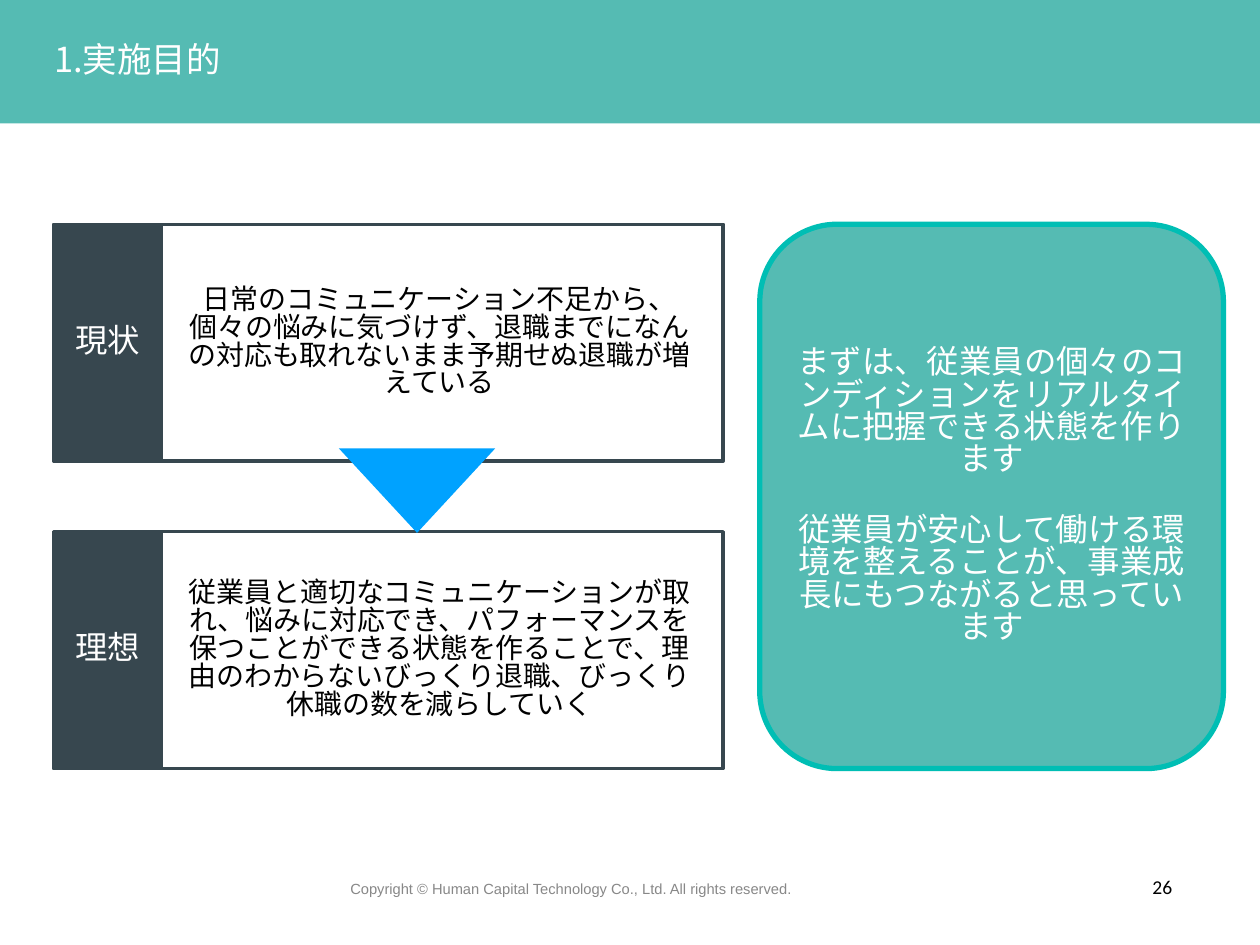
import pptx
import pptx.util
import pptx.dml.color
import pptx.enum.shapes
import pptx.enum.text
import pptx.oxml.ns
from lxml import etree

Inches, Pt = pptx.util.Inches, pptx.util.Pt
KIND = pptx.enum.shapes.MSO_SHAPE
ALIGN = pptx.enum.text.PP_ALIGN
ANCHOR = pptx.enum.text.MSO_ANCHOR

COLORS = {"teal": "55BBB3", "edge": "00BEB4", "slate": "37474F",
          "arrow": "00A2FF", "white": "FFFFFF", "black": "000000",
          "gray": "888888"}
FONT = "Noto Sans CJK JP"
TIGHT = 0.83

TITLE = "1.実施目的"
STAGES = [
    ("現状", "日常のコミュニケーション不足から、個々の悩みに気づけず、"
     "退職までになんの対応も取れないまま予期せぬ退職が増えている"),
    ("理想", "従業員と適切なコミュニケーションが取れ、悩みに対応でき、"
     "パフォーマンスを保つことができる状態を作ることで、"
     "理由のわからないびっくり退職、びっくり休職の数を減らしていく"),
]
GOALS = [
    "まずは、従業員の個々のコンディションをリアルタイムに把握できる状態を作ります",
    "従業員が安心して働ける環境を整えることが、事業成長にもつながると思っています",
]
FOOTER = "Copyright © Human Capital Technology Co., Ltd. All rights reserved."
PAGE = "26"

LEFT, TOP, WIDE, HIGH, STEP = 0.43, 1.78, 5.31, 1.88, 2.44
LABEL = 0.85

deck = pptx.Presentation()
deck.slide_width, deck.slide_height = Inches(10), Inches(7.5)
slide = deck.slides.add_slide(deck.slide_layouts[6])


def rgb(name):
    return pptx.dml.color.RGBColor.from_string(COLORS[name])


def shape(kind, box, fill=None, line=None, width=2):
    item = slide.shapes.add_shape(kind, *map(Inches, box))
    item.shadow.inherit = False
    if fill:
        item.fill.solid()
        item.fill.fore_color.rgb = rgb(fill)
    else:
        item.fill.background()
    if line:
        item.line.color.rgb = rgb(line)
        item.line.width = Pt(width)
    else:
        item.line.fill.background()
    return item


def write(item, texts, size, color, font=FONT, align=ALIGN.CENTER,
          pad=0.04, wrap=True, anchor=ANCHOR.MIDDLE, gap=0):
    frame = item.text_frame
    frame.word_wrap = wrap
    frame.vertical_anchor = anchor
    frame.margin_left = frame.margin_right = Inches(pad)
    frame.margin_top = frame.margin_bottom = Inches(pad)
    for i, text in enumerate(texts):
        para = frame.add_paragraph() if i else frame.paragraphs[0]
        para.alignment = align
        if font == FONT:
            para.line_spacing = TIGHT
        if i:
            para.space_before = Pt(gap)
        run = para.add_run()
        run.text = text
        run.font.name = font
        run.font.size = Pt(size)
        run.font.color.rgb = rgb(color)
        # East Asian glyphs take their face from a:ea
        east = etree.SubElement(run.font._element, pptx.oxml.ns.qn("a:ea"))
        east.set("typeface", font)


def label(box, text, *args, **kw):
    write(slide.shapes.add_textbox(*map(Inches, box)), [text], *args, **kw)


shape(KIND.RECTANGLE, (0, 0, 10, 0.98), "teal")
label((LEFT, 0.33, 3.65, 0.33), TITLE, 19.7, "white",
      align=ALIGN.LEFT, pad=0, wrap=False)

for i, (name, _) in enumerate(STAGES):
    top = TOP + i * STEP
    shape(KIND.RECTANGLE, (LEFT, top, WIDE, HIGH), line="slate")
    tag = shape(KIND.RECTANGLE, (LEFT, top, LABEL, HIGH), "slate", "slate")
    write(tag, [name], 18.5, "white", pad=0.1)

goal = shape(KIND.ROUNDED_RECTANGLE, (6.03, TOP, 3.68, STEP + HIGH),
             "teal", "edge", 3)
write(goal, GOALS, 18.5, "white", gap=22)

arrow = shape(KIND.ISOSCELES_TRIANGLE, (2.69, 3.56, 1.24, 0.67), "arrow")
arrow._element.spPr.find(pptx.oxml.ns.qn("a:xfrm")).set("flipV", "1")

for i, (_, text) in enumerate(STAGES):
    label((1.44, TOP + i * STEP, 4.1, HIGH), text, 16, "black")

label((2.74, 6.93, 4.52, 0.24), FOOTER, 8.4, "gray", font="Arial",
      align=ALIGN.LEFT)
label((8.93, 6.9, 0.59, 0.27), PAGE, 11.2, "black", font="Calibri",
      anchor=ANCHOR.TOP)

deck.save("out.pptx")
